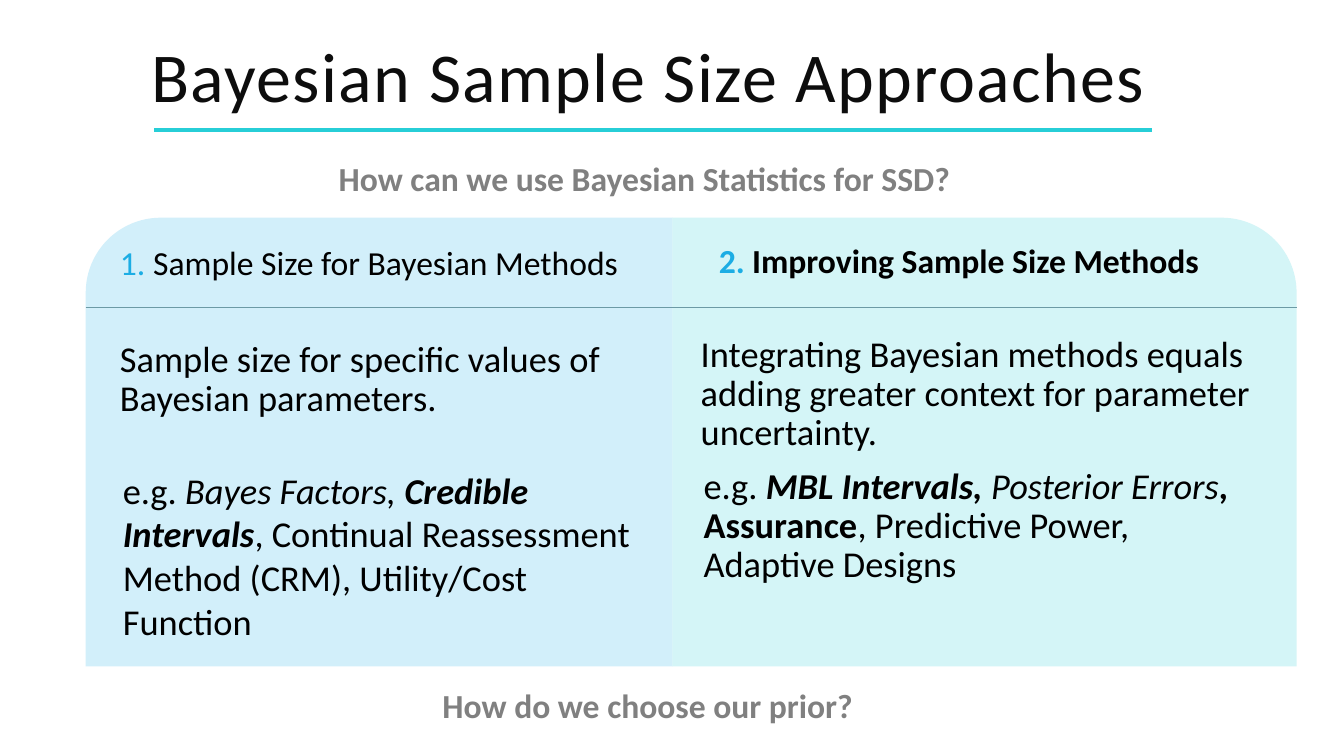
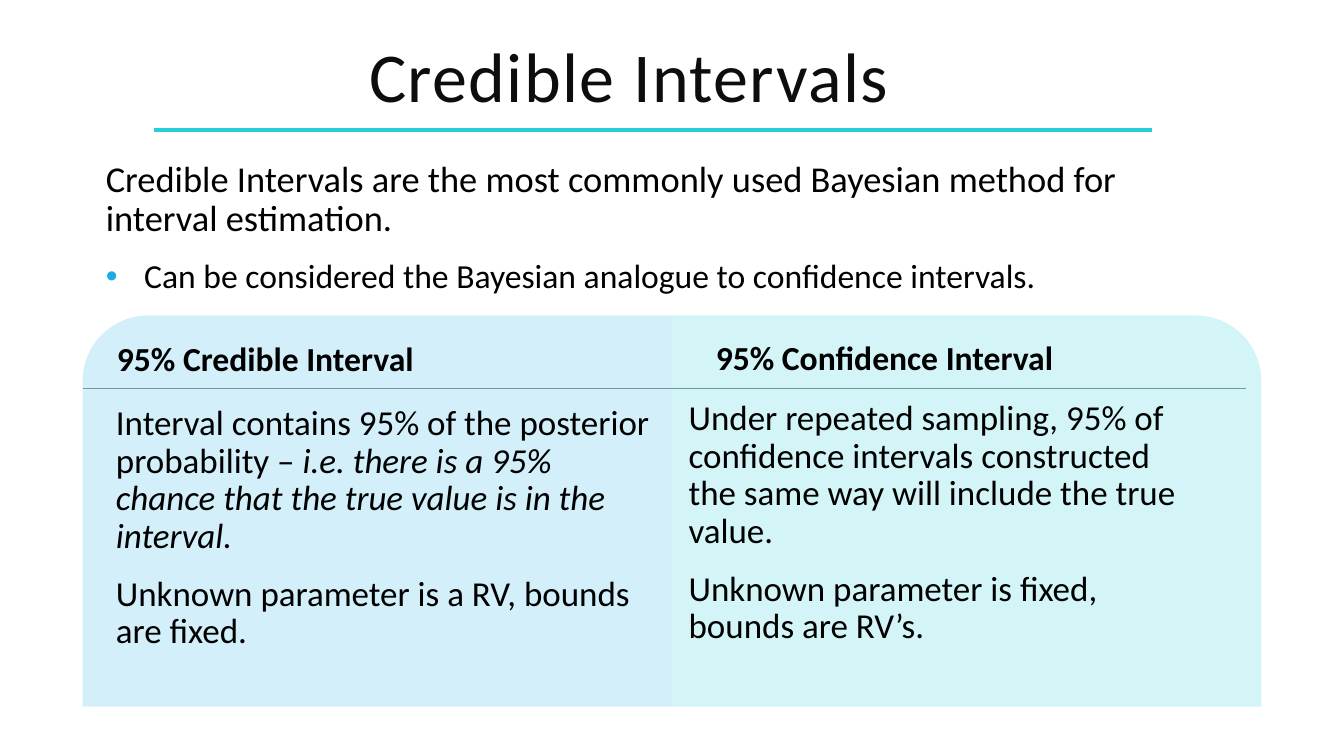
from lxml import etree
from pptx import Presentation
from pptx.dml.color import RGBColor
from pptx.enum import shapes, text
from pptx.oxml.ns import qn
from pptx.util import Inches, Pt

FONT = "Calibri"
TEAL = RGBColor(0x27, 0xCE, 0xD7)
DIVIDER = RGBColor(0x6C, 0x9A, 0xA5)
PALE_BLUE = RGBColor(0xD2, 0xEF, 0xFA)
PALE_TEAL = RGBColor(0xD4, 0xF5, 0xF7)
BULLET = RGBColor(0x1C, 0xAD, 0xE4)
INK = RGBColor(0x0D, 0x0D, 0x0D)
BLACK = RGBColor(0, 0, 0)
GRAY = RGBColor(0x80, 0x80, 0x80)


class SlideBuilder:
    """Holds the shared style and the slide being built."""

    def __init__(self):
        self.deck = Presentation()
        self.deck.slide_width = Inches(13.33)
        self.deck.slide_height = Inches(7.5)
        self.page = None

    def start(self, title, title_width):
        """Add a slide with its title and rule."""
        self.page = self.deck.slides.add_slide(self.deck.slide_layouts[6])
        self.line(1.53, 11.43, 1.29, TEAL, 3)
        frame = self.frame(1.25, 0, title_width, 1.64, 0.1)
        frame.vertical_anchor = text.MSO_ANCHOR.MIDDLE
        para = frame.paragraphs[0]
        para.alignment = text.PP_ALIGN.CENTER
        para.line_spacing = 0.8
        span = self.span(para, title, 50, INK)
        span.font._element.set("spc", "100")

    def line(self, left, right, top, color, weight):
        """Draw a horizontal line."""
        line = self.page.shapes.add_connector(
            shapes.MSO_CONNECTOR.STRAIGHT,
            Inches(left), Inches(top), Inches(right), Inches(top))
        line.line.color.rgb = color
        line.line.width = Pt(weight)
        etree.SubElement(line._element.spPr, qn("a:effectLst"))

    def panel(self, left, top, width, height, fill, divider, mirrored=False):
        """Draw a panel with one rounded outer corner and a header divider."""
        panel = self.page.shapes.add_shape(
            shapes.MSO_SHAPE.SNIP_ROUND_RECTANGLE,
            Inches(left), Inches(top), Inches(width), Inches(height))
        panel.shadow.inherit = False
        panel.adjustments[0] = 0.167
        panel.adjustments[1] = 0
        panel.fill.solid()
        panel.fill.fore_color.rgb = fill
        panel.line.fill.background()
        if mirrored:
            panel._element.spPr.get_or_add_xfrm().set("flipH", "1")
        self.line(left, divider[0], divider[1], DIVIDER, 0.75)

    def frame(self, left, top, width, height, side_inset=0.05):
        """Add a wrapping text box and return its text frame."""
        box = self.page.shapes.add_textbox(
            Inches(left), Inches(top), Inches(width), Inches(height))
        frame = box.text_frame
        frame.word_wrap = True
        frame.margin_left = frame.margin_right = Inches(side_inset)
        frame.margin_top = frame.margin_bottom = Inches(0.05)
        return frame

    def span(self, para, words, size, color=BLACK, style=""):
        """Add one run; style letters are b for bold and i for italic."""
        span = para.add_run()
        span.text = words
        span.font.name = FONT
        span.font.size = Pt(size)
        span.font.color.rgb = color
        span.font.bold = "b" in style
        span.font.italic = "i" in style
        return span

    def para(self, frame, spans, size, color=BLACK, spacing=0.9,
             bullet=None, indent=0.0):
        """Add a paragraph made of (words, style) pairs."""
        first = not frame.paragraphs[0].runs
        para = frame.paragraphs[0] if first else frame.add_paragraph()
        if bullet:
            self.bullet(para, bullet, indent)
        para.line_spacing = spacing
        para.space_before = Pt(0 if first else 12)
        para.space_after = Pt(2)
        for words, style in spans:
            self.span(para, words, size, color, style)

    def bullet(self, para, bullet, indent):
        """Give a paragraph a bullet character or, for an int, a number."""
        props = para._p.get_or_add_pPr()
        props.set("marL", str(Inches(indent)))
        props.set("indent", str(-Inches(indent)))
        tint = etree.SubElement(props, qn("a:buClr"))
        etree.SubElement(tint, qn("a:srgbClr"), val=str(BULLET))
        if isinstance(bullet, int):
            etree.SubElement(props, qn("a:buAutoNum"),
                             type="arabicPeriod", startAt=str(bullet))
        else:
            etree.SubElement(props, qn("a:buFont"), typeface="Arial")
            etree.SubElement(props, qn("a:buChar"), char=bullet)

    def text(self, area, paragraphs, size, side_inset=0.05, **style):
        """Add a text box holding the given paragraphs."""
        frame = self.frame(*area, side_inset)
        for spans in paragraphs:
            self.para(frame, spans, size, **style)


def add_approaches(deck):
    """Build the slide on sample size approaches."""
    deck.start("Bayesian Sample Size Approaches", 10.37)
    deck.panel(0.85, 2.16, 5.82, 4.45, PALE_BLUE, (6.67, 3.05))
    deck.panel(6.67, 2.16, 6.19, 4.45, PALE_TEAL, (12.86, 3.05), True)
    headings = [
        ((1.14, 2.4, 5.43, 0.6), "Sample Size for Bayesian Methods", ""),
        ((7.08, 2.38, 5.53, 0.6), "Improving Sample Size Methods", "b"),
    ]
    for number, (area, words, style) in enumerate(headings, 1):
        deck.text(area, [[(words, style)]], 24, bullet=number, indent=0.33)
    deck.text((1.14, 3.33, 5.43, 0.9), [
        [("Sample size for specific values of Bayesian parameters.", "")]], 26)
    deck.text((6.9, 3.28, 5.68, 1.31), [
        [("Integrating Bayesian methods equals adding greater context "
          "for parameter uncertainty.", "")]], 26)
    deck.text((1.12, 4.59, 5.43, 1.85), [[
        ("e.g. ", ""), ("Bayes Factors, ", "i"), ("Credible Intervals", "bi"),
        (", Continual Reassessment Method (CRM), Utility/Cost Function", ""),
    ]], 26, 0.1, spacing=1.0)
    deck.text((6.88, 4.59, 5.73, 1.28), [[
        ("e.g. ", ""), ("MBL Intervals, ", "bi"), ("Posterior Errors", "i"),
        (", ", "bi"), ("Assurance", "b"),
        (", Predictive Power, Adaptive Designs", ""),
    ]], 26, 0.1)
    questions = [
        ((3.26, 1.52, 7.22, 0.5), "How can we use Bayesian Statistics for SSD?"),
        ((4.29, 6.75, 4.76, 0.5), "How do we choose our prior?"),
    ]
    for area, words in questions:
        deck.text(area, [[(words, "b")]], 24, 0.1, color=GRAY, spacing=1.0)


def add_intervals(deck):
    """Build the slide on credible intervals."""
    deck.start("Credible Intervals", 9.98)
    intro = deck.frame(1, 1.55, 10.47, 1.5)
    deck.para(intro, [("Credible Intervals are the most commonly used Bayesian "
                       "method for interval estimation.", "")], 26)
    deck.para(intro, [("Can be considered the Bayesian analogue to "
                       "confidence intervals.", "")], 24,
              bullet="•", indent=0.38)
    deck.panel(0.82, 3.13, 5.85, 3.88, PALE_BLUE, (6.67, 3.85))
    deck.panel(6.67, 3.13, 5.84, 3.88, PALE_TEAL, (12.36, 3.85), True)
    deck.text((1.11, 3.35, 5.46, 0.5), [[("95% Credible Interval", "b")]], 24)
    deck.text((7.05, 3.34, 5.07, 0.5), [[("95% Confidence Interval", "b")]], 24)
    deck.text((1.1, 3.97, 5.46, 2.65), [
        [("Interval contains 95% of the posterior probability – ", ""),
         ("i.e. there is a 95% chance that the true value is in the interval.",
          "i")],
        [("Unknown parameter is a RV, bounds are fixed.", "")],
    ], 25)
    deck.text((6.78, 3.92, 5.21, 2.7), [
        [("Under repeated sampling, 95% of confidence intervals constructed "
          "the same way will include the true value.", "")],
        [("Unknown parameter is fixed, bounds are RV’s.", "")],
    ], 25)


def main():
    """Build and save the deck."""
    builder = SlideBuilder()
    add_approaches(builder)
    add_intervals(builder)
    builder.deck.save("out.pptx")


if __name__ == "__main__":
    main()
